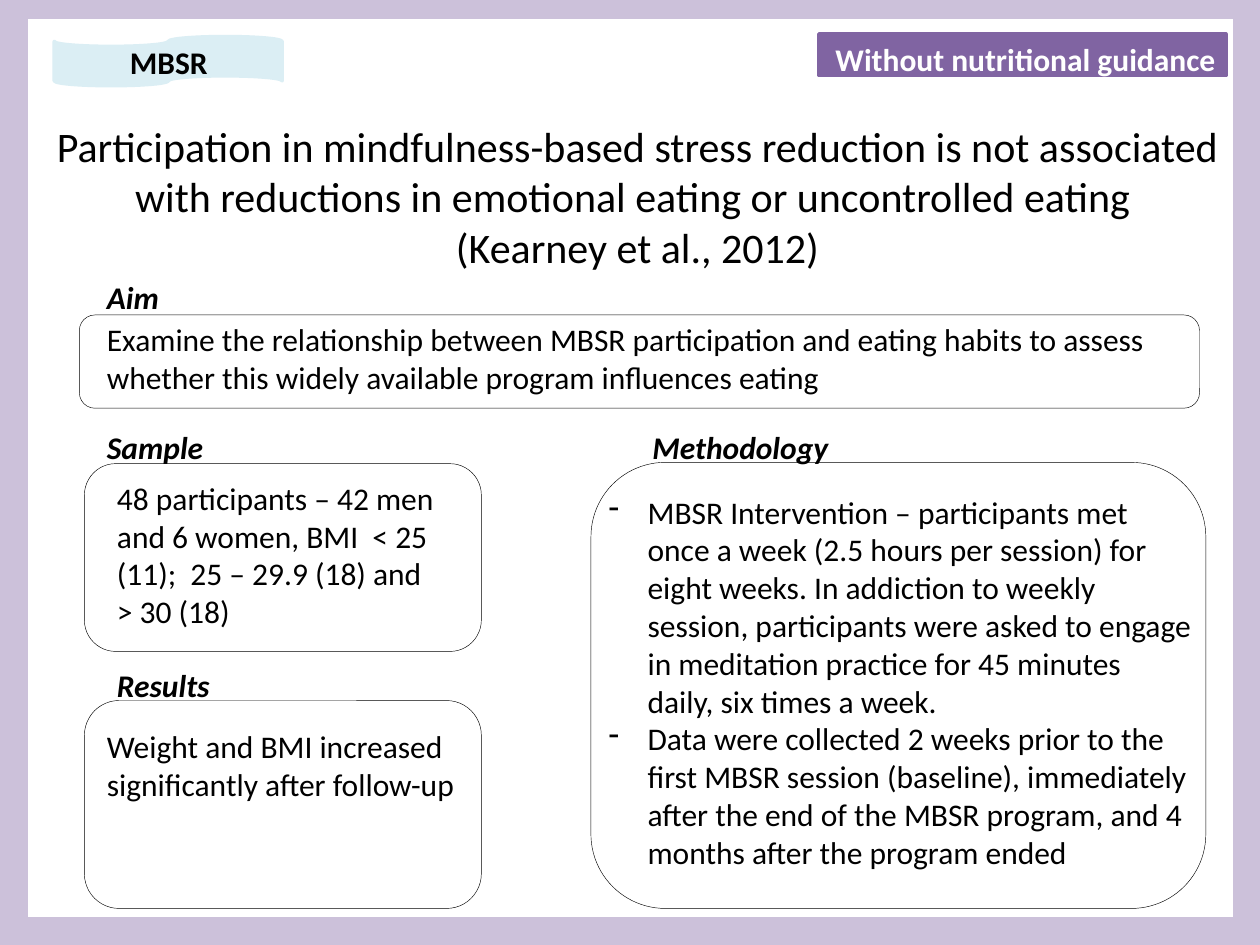
from lxml import etree
from pptx import Presentation
from pptx.dml.color import RGBColor
from pptx.enum.shapes import MSO_SHAPE
from pptx.enum.text import MSO_ANCHOR, MSO_AUTO_SIZE, PP_ALIGN
from pptx.oxml.ns import qn
from pptx.util import Inches, Pt

RECT, TAPE = MSO_SHAPE.RECTANGLE, MSO_SHAPE.FLOWCHART_PUNCHED_TAPE
FRAME, ROUNDED = MSO_SHAPE.FRAME, MSO_SHAPE.ROUNDED_RECTANGLE
LEFT, CENTER = PP_ALIGN.LEFT, PP_ALIGN.CENTER
TOP, MIDDLE = MSO_ANCHOR.TOP, MSO_ANCHOR.MIDDLE
NO_AUTOFIT = MSO_AUTO_SIZE.NONE

BLACK = RGBColor(0x00, 0x00, 0x00)
WHITE = RGBColor(0xFF, 0xFF, 0xFF)
PURPLE = RGBColor(0x80, 0x64, 0xA2)
LILAC = RGBColor(0xCC, 0xC1, 0xDA)
PALE_BLUE = RGBColor(0xDB, 0xEE, 0xF4)

# Grid of 100 columns by 75 rows on a 10 x 7.5 inch slide
COLUMNS, ROWS = 100, 75
CELL = Inches(10) / COLUMNS

BODY = {"name": "Calibri", "size": Pt(18)}
BADGE = {**BODY, "bold": True}
HEADING = {**BADGE, "italic": True}
TITLE = {**BODY, "size": Pt(24)}

HEADING_SIZE = (19.3, 4)
LEFT_EDGE, LEFT_WIDTH = 6.7, 31.5

# Decoration: grid box, outline, colour
DECORATION = [
    (RECT, (65, 2.7, 32.3, 3.3), PURPLE),
    (TAPE, (4.3, 2.9, 18.1, 3.9), PALE_BLUE),
    (FRAME, (-9.8, -10.5, 119.7, 95.3), LILAC),
]
BADGES = [
    ("Without nutritional guidance", (63.7, 2.7, 35.4, 4), WHITE),
    ("MBSR", (-4.3, 2.9, 35.4, 4), BLACK),
]
PANELS = [
    (LEFT_EDGE, 36.8, LEFT_WIDTH, 14.9),
    (LEFT_EDGE, 55.6, LEFT_WIDTH, 16.5),
    (46.9, 36.7, 48.8, 35.4),
    (6.3, 25, 88.9, 7.4),
]
HEADINGS = [
    ("Aim", (7.5, 21.6)),
    ("Sample", (7.5, 33.5)),
    ("Results", (8.3, 52.4)),
    ("Methodology", (50.8, 33.5)),
]
PASSAGES = [
    ("Examine the relationship between MBSR participation and eating habits "
     "to assess whether this widely available program influences eating",
     (7.5, 24.9, 87, 7.1)),
    ("48 participants – 42 men and 6 women, BMI  < 25 (11);  25 – 29.9 (18) "
     "and  > 30 (18)", (8.3, 37.5, 28.3, 19.2)),
    ("Weight and BMI increased significantly after follow-up",
     (7.5, 57.2, 29.9, 7.1)),
]
STUDY_TITLE = (
    "Participation in mindfulness-based stress reduction is not associated "
    "with reductions in emotional eating or uncontrolled eating "
    "\v(Kearney et al., 2012)")
METHOD_STEPS = [
    "MBSR Intervention – participants met once a week (2.5 hours per session) "
    "for eight weeks. In addiction to weekly session, participants were asked "
    "to engage in meditation practice for 45 minutes daily, six times a week.",
    "Data were collected 2 weeks prior to the first MBSR session (baseline), "
    "immediately after the end of the MBSR program, and 4 months after the "
    "program ended",
]


def on_grid(box):
    return [round(length * CELL) for length in box]


def place(placeholder, box):
    sides = ("left", "top", "width", "height")
    for side, length in zip(sides, on_grid(box)):
        setattr(placeholder, side, length)


def write(holder, paragraphs, look, color=BLACK, align=LEFT, anchor=TOP):
    frame = holder.text_frame
    frame.word_wrap = True
    frame.auto_size = NO_AUTOFIT
    frame.vertical_anchor = anchor
    frame.text = "\n".join(paragraphs)
    for paragraph in frame.paragraphs:
        paragraph.alignment = align
        paragraph.space_before = Pt(0)
        for run in paragraph.runs:
            for attribute, value in look.items():
                setattr(run.font, attribute, value)
            run.font.color.rgb = color


def add_text(slide, text, box, look, **options):
    write(slide.shapes.add_textbox(*on_grid(box)), [text], look, **options)


def add_outline(slide, kind, box, line_color, line_width, fill_color=None):
    shape = slide.shapes.add_shape(kind, *on_grid(box))
    shape.shadow.inherit = False
    if fill_color is None:
        shape.fill.background()
    else:
        shape.fill.solid()
        shape.fill.fore_color.rgb = fill_color
    shape.line.color.rgb = line_color
    shape.line.width = Pt(line_width)


def add_dashes(frame, indent):
    for paragraph in frame.paragraphs:
        properties = paragraph._p.get_or_add_pPr()
        properties.set("marL", str(indent))
        properties.set("indent", str(-indent))
        etree.SubElement(properties, qn("a:buFontTx"))
        etree.SubElement(properties, qn("a:buChar"), char="-")


def main():
    deck = Presentation()
    deck.slide_width, deck.slide_height = on_grid((COLUMNS, ROWS))
    slide = deck.slides.add_slide(deck.slide_layouts[1])

    # Border and badges
    for kind, box, color in DECORATION:
        add_outline(slide, kind, box, color, 2, color)
    for label, box, color in BADGES:
        add_text(slide, label, box, BADGE, color=color, align=CENTER)

    # Study title
    title = slide.shapes.title
    place(title, (2, 9.3, 97.2, 12.5))
    write(title, [STUDY_TITLE], TITLE, align=CENTER, anchor=MIDDLE)

    # Panels with their headings and passages
    for box in PANELS:
        add_outline(slide, ROUNDED, box, BLACK, 0.25)
    for heading, corner in HEADINGS:
        add_text(slide, heading, corner + HEADING_SIZE, HEADING)
    for passage, box in PASSAGES:
        add_text(slide, passage, box, BODY)

    # Methodology list
    methodology = slide.placeholders[1]
    place(methodology, (47.3, 38.6, 48.4, 34.3))
    write(methodology, METHOD_STEPS, BODY)
    add_dashes(methodology.text_frame, Inches(0.31))

    deck.save("out.pptx")


if __name__ == "__main__":
    main()
